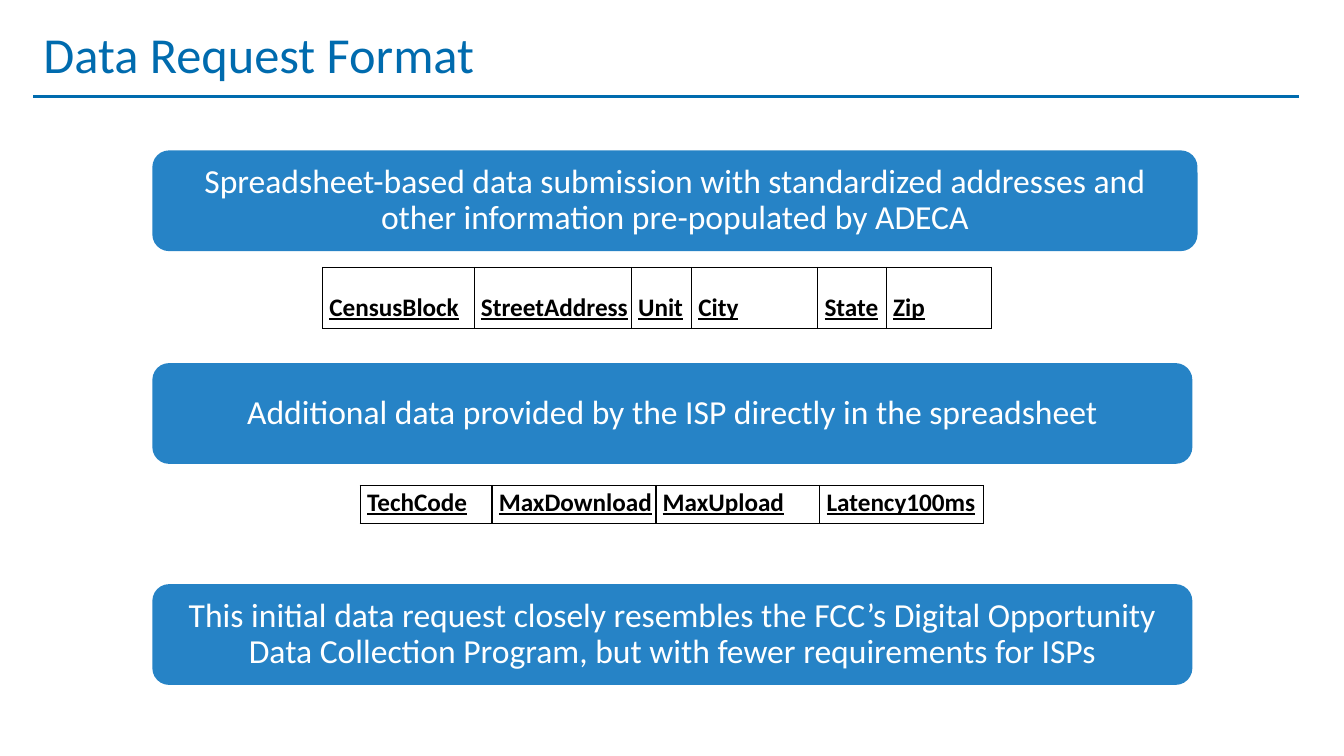
from lxml.etree import SubElement
from pptx import Presentation
from pptx.dml.color import RGBColor
from pptx.enum.shapes import MSO_CONNECTOR, MSO_SHAPE
from pptx.enum.text import MSO_ANCHOR, MSO_AUTO_SIZE, PP_ALIGN
from pptx.oxml import parse_xml
from pptx.oxml.ns import nsdecls, qn
from pptx.util import Cm, Pt

TITLE_BLUE = "006BAE"
BANNER_BLUE = "2683C6"
WHITE = "FFFFFF"
BLACK = "000000"


def rgb(value):
    return RGBColor.from_string(value)


def format_paragraph(p, size, color, align, spacing=1.0):
    p.alignment = align
    p.line_spacing = spacing
    for r in p.runs:
        r.font.name = "Calibri"
        r.font.size = Pt(size)
        r.font.color.rgb = rgb(color)


def set_title(s, text):
    sp = s.shapes.title
    sp.left, sp.top, sp.width, sp.height = Cm(0.84), Cm(0.64), Cm(29.21), Cm(3.68)
    tf = sp.text_frame
    tf.text = text
    tf.auto_size = MSO_AUTO_SIZE.NONE
    tf.vertical_anchor = MSO_ANCHOR.TOP
    format_paragraph(tf.paragraphs[0], 36, TITLE_BLUE, PP_ALIGN.LEFT, 0.9)


def add_rule(s):
    line = s.shapes.add_connector(
        MSO_CONNECTOR.STRAIGHT, Cm(0.84), Cm(2.44), Cm(32.74), Cm(2.44))
    line.line.color.rgb = rgb(TITLE_BLUE)
    line.line.width = Pt(2.25)
    SubElement(line._element.spPr, qn("a:effectLst"))


def add_banner(s, top, width, text):
    sp = s.shapes.add_shape(
        MSO_SHAPE.ROUNDED_RECTANGLE, Cm(3.84), Cm(top), Cm(width), Cm(2.54))
    sp.shadow.inherit = False
    sp.fill.solid()
    sp.fill.fore_color.rgb = rgb(BANNER_BLUE)
    sp.line.fill.background()
    tf = sp.text_frame
    tf.text = text
    tf.word_wrap = True
    tf.vertical_anchor = MSO_ANCHOR.MIDDLE
    tf.margin_left = tf.margin_right = Cm(0.25)
    tf.margin_top = tf.margin_bottom = Cm(0.25)
    format_paragraph(tf.paragraphs[0], 24, WHITE, PP_ALIGN.CENTER, 0.9)


def add_borders(cell, visible):
    tcPr = cell._tc.get_or_add_tcPr()
    for i, side in enumerate(("lnL", "lnR", "lnT", "lnB")):
        paint = "<a:noFill/>"
        if side in visible:
            paint = f'<a:solidFill><a:srgbClr val="{BLACK}"/></a:solidFill>'
        tcPr.insert(i, parse_xml(
            f'<a:{side} {nsdecls("a")} w="{Pt(1)}">{paint}</a:{side}>'))


def format_cell(cell, visible_borders):
    cell.fill.background()
    cell.vertical_anchor = MSO_ANCHOR.BOTTOM
    cell.margin_left = Cm(0.17)
    cell.margin_right = cell.margin_top = Cm(0.02)
    cell.margin_bottom = Cm(0.13)
    add_borders(cell, visible_borders)


def add_field_table(s, left, top, row_height, fields):
    table = s.shapes.add_table(
        2, len(fields), Cm(left), Cm(top),
        Cm(sum(width for _, width in fields)), Cm(2 * row_height)).table
    table.first_row = False
    table.horz_banding = False
    for i, (name, width) in enumerate(fields):
        table.columns[i].width = Cm(width)
        header, entry = table.cell(0, i), table.cell(1, i)
        header.text = name
        p = header.text_frame.paragraphs[0]
        format_paragraph(p, 18, BLACK, PP_ALIGN.LEFT)
        p.runs[0].font.bold = True
        p.runs[0].font.underline = True
        format_cell(header, ("lnL", "lnR", "lnT", "lnB"))
        format_cell(entry, ("lnT",))
    return table


def main():
    prs = Presentation()
    prs.slide_width, prs.slide_height = Cm(33.87), Cm(19.05)
    s = prs.slides.add_slide(prs.slide_layouts[5])
    set_title(s, "Data Request Format")
    add_rule(s)
    add_banner(s, 3.79, 26.34,
               "Spreadsheet-based data submission with standardized addresses "
               "and other information pre-populated by ADECA")
    address_table = add_field_table(s, 8.13, 6.74, 1.53, [
        ("CensusBlock", 3.82), ("StreetAddress", 3.96), ("Unit", 1.52),
        ("City", 3.18), ("State", 1.73), ("Zip", 2.65)])
    address_table.cell(1, 2).merge(address_table.cell(1, 3))
    add_banner(s, 9.15, 26.21,
               "Additional data provided by the ISP directly in the spreadsheet")
    add_field_table(s, 9.08, 12.23, 0.96, [
        ("TechCode", 3.32), ("MaxDownload", 4.13),
        ("MaxUpload", 4.13), ("Latency100ms", 4.13)])
    add_banner(s, 14.72, 26.21,
               "This initial data request closely resembles the FCC’s Digital "
               "Opportunity Data Collection Program, but with fewer "
               "requirements for ISPs")
    prs.save("out.pptx")


if __name__ == "__main__":
    main()
